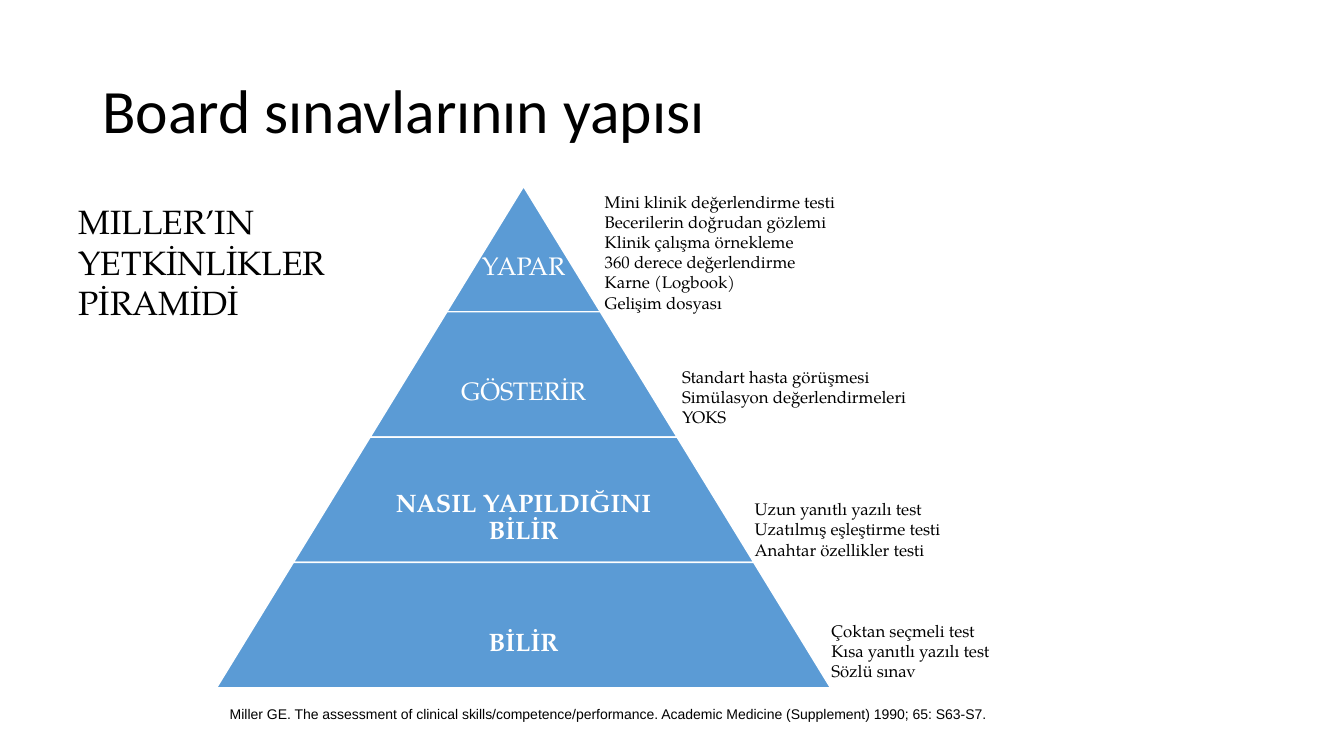
import pptx
import pptx.util
import pptx.dml.color
import pptx.enum.shapes
import pptx.enum.text

Cm = pptx.util.Cm
Pt = pptx.util.Pt
BLUE = pptx.dml.color.RGBColor(0x5B, 0x9B, 0xD5)
WHITE = pptx.dml.color.RGBColor(0xFF, 0xFF, 0xFF)
BLACK = pptx.dml.color.RGBColor(0x00, 0x00, 0x00)
SERIF = "TeX Gyre Pagella"
CENTER = pptx.enum.text.PP_ALIGN.CENTER
MIDDLE = pptx.enum.text.MSO_ANCHOR.MIDDLE

LEVELS = [
    ("YAPAR", False),
    ("GÖSTERİR", False),
    ("NASIL YAPILDIĞINI BİLİR", True),
    ("BİLİR", True),
]
ASSESSMENTS = [
    ((14.99, 4.7, 9.07, 3.33), [
        "Mini klinik değerlendirme testi",
        "Becerilerin doğrudan gözlemi",
        "Klinik çalışma örnekleme",
        "360 derece değerlendirme",
        "Karne (Logbook)",
        "Gelişim dosyası",
    ]),
    ((16.94, 9.12, 8.81, 1.8), [
        "Standart hasta görüşmesi",
        "Simülasyon değerlendirmeleri",
        "YOKS",
    ]),
    ((18.77, 12.45, 7.39, 1.8), [
        "Uzun yanıtlı yazılı test",
        "Uzatılmış eşleştirme testi",
        "Anahtar özellikler testi",
    ]),
    ((20.7, 15.52, 6.71, 1.8), [
        "Çoktan seçmeli test",
        "Kısa yanıtlı yazılı test",
        "Sözlü sınav",
    ]),
]


def add_text(slide, box, text, size, font=SERIF, color=BLACK, bold=False,
             align=None, spacing=None):
    frame = slide.shapes.add_textbox(*map(Cm, box)).text_frame
    frame.word_wrap = True
    frame.text = text
    for paragraph in frame.paragraphs:
        paragraph.alignment = align
        paragraph.line_spacing = spacing
        for run in paragraph.runs:
            run.font.name = font
            run.font.size = Pt(size)
            run.font.bold = bold
            run.font.color.rgb = color
    return frame


def add_title(slide, box):
    title = add_text(slide, box, "Board sınavlarının yapısı", 44, "Calibri", spacing=0.9)
    title.vertical_anchor = MIDDLE


def add_level(slide, box, slope, label, bold, label_share):
    left, top, width, height = box
    tier = slide.shapes.add_shape(
        pptx.enum.shapes.MSO_SHAPE.TRAPEZOID, *map(Cm, box))
    tier.adjustments[0] = slope / height
    tier.shadow.inherit = False
    tier.fill.solid()
    tier.fill.fore_color.rgb = BLUE
    tier.line.color.rgb = WHITE
    tier.line.width = Pt(1)

    label_width = width * label_share
    label_box = (left + (width - label_width) / 2, top, label_width, height)
    caption = add_text(slide, label_box, label, 18, color=WHITE, bold=bold,
                       align=CENTER, spacing=0.9)
    caption.vertical_anchor = MIDDLE
    caption.margin_left = caption.margin_right = caption.margin_bottom = Cm(0.08)
    caption.margin_top = Cm(1)


def add_pyramid(slide, box):
    left, top, width, height = box
    tier_height = height / len(LEVELS)
    slope = width / len(LEVELS) / 2
    for index, (label, bold) in enumerate(LEVELS):
        tier_width = 2 * slope * (index + 1)
        tier_box = (left + (width - tier_width) / 2, top + index * tier_height,
                    tier_width, tier_height)
        add_level(slide, tier_box, slope, label, bold, 0.65 if index else 1)


def add_assessments(slide):
    for box, methods in ASSESSMENTS:
        add_text(slide, box, "\n".join(methods), 12)


def main():
    presentation = pptx.Presentation()
    presentation.slide_width = Cm(33.87)
    presentation.slide_height = Cm(19.05)
    slide = presentation.slides.add_slide(presentation.slide_layouts[6])
    add_title(slide, (2.33, 1.01, 29.21, 3.68))
    add_text(slide, (1.73, 4.95, 7.85, 3.33), "MILLER’IN YETKİNLİKLER PİRAMİDİ", 24)
    add_pyramid(slide, (5.46, 4.7, 15.47, 12.63))
    add_assessments(slide)
    add_text(slide, (5.54, 17.65, 20, 0.69),
             "Miller GE. The assessment of clinical skills/competence/performance. "
             "Academic Medicine (Supplement) 1990; 65: S63-S7.", 10, "Arial")
    presentation.save("out.pptx")


if __name__ == "__main__":
    main()
